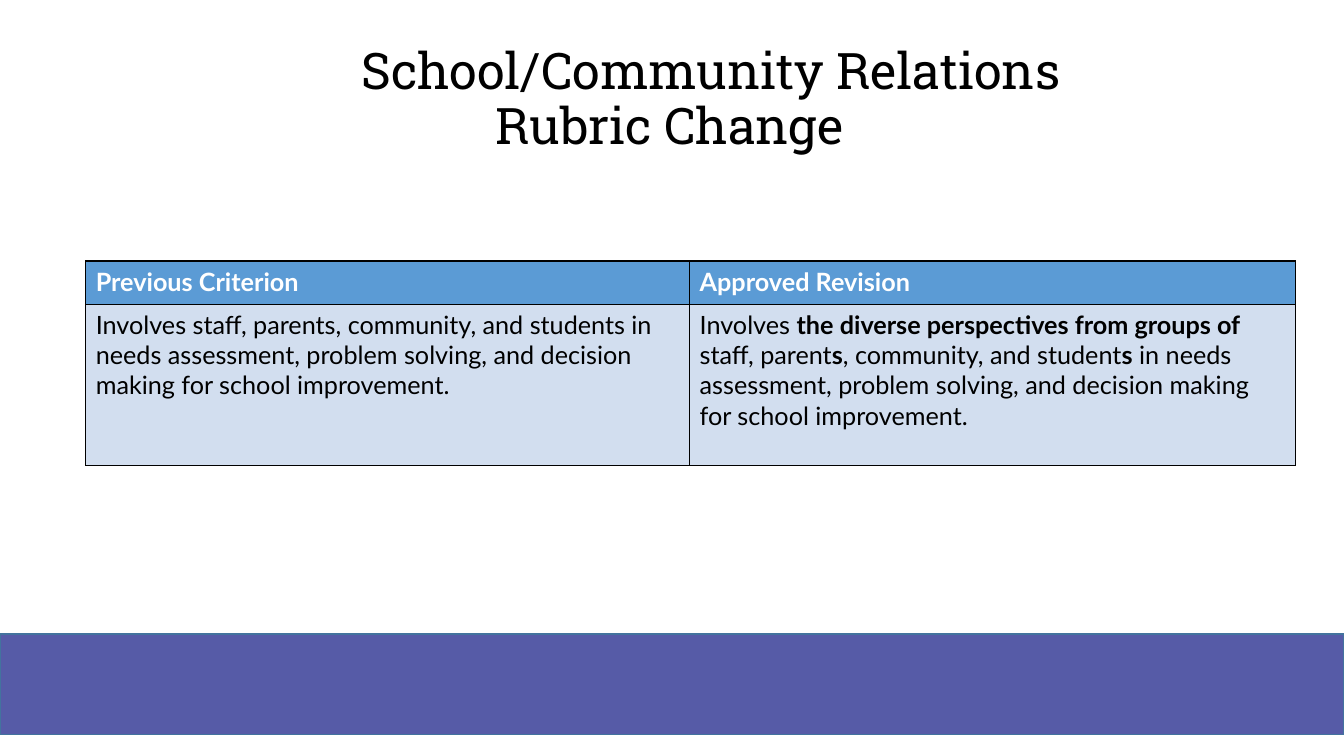
from lxml import etree
from pptx import Presentation
from pptx.dml.color import RGBColor
from pptx.enum.shapes import MSO_SHAPE
from pptx.enum.text import MSO_ANCHOR, PP_ALIGN
from pptx.oxml.ns import qn
from pptx.util import Inches, Pt

RECTANGLE = MSO_SHAPE.RECTANGLE
MIDDLE = MSO_ANCHOR.MIDDLE
CENTER = PP_ALIGN.CENTER

BLANK_LAYOUT = 6
BLACK, WHITE = "000000", "FFFFFF"
HEADER_FILL, BODY_FILL = "5B9BD5", "D2DEEF"
COLUMN_WIDTHS = (5.99, 6.01)
ROW_HEIGHTS = (0.43, 1.6)

# Each cell is a list of (text, bold) runs.
CRITERIA = [
    [[("Previous Criterion", True)], [("Approved Revision", True)]],
    [
        [("Involves staff, parents, community, and students in needs assessment, "
          "problem solving, and decision making for school improvement.", False)],
        [("Involves ", False),
         ("the diverse perspectives from groups of ", True),
         ("staff, parent", False),
         ("s", True),
         (", community, and student", False),
         ("s", True),
         (" in needs assessment, problem solving, and decision making "
          "for school improvement.", False)],
    ],
]


def color(hex_string):
    return RGBColor.from_string(hex_string)


def set_font(font, name, size, hex_string):
    font.name = name
    font.size = Pt(size)
    font.color.rgb = color(hex_string)


def add_band(slide, left, top, width, height):
    band = slide.shapes.add_shape(RECTANGLE, left, top, width, height)
    band.shadow.inherit = False
    band.fill.solid()
    band.fill.fore_color.rgb = color("565BA7")
    band.line.color.rgb = color("43739E")
    band.line.width = Pt(1)


def add_title(slide, text, first_line_indent):
    box = slide.shapes.add_textbox(Inches(0.64), Inches(0.4), Inches(12), Inches(1.2))
    frame = box.text_frame
    frame.word_wrap = True
    frame.vertical_anchor = MIDDLE
    paragraph = frame.paragraphs[0]
    paragraph.text = text
    paragraph.alignment = CENTER
    paragraph.line_spacing = 0.9
    paragraph._p.get_or_add_pPr().set("indent", str(Inches(first_line_indent)))
    set_font(paragraph.font, "Roboto Slab", 36, BLACK)
    for run in paragraph.runs:
        set_font(run.font, "Roboto Slab", 36, BLACK)


def add_borders(cell, hex_string, width):
    properties = cell._tc.get_or_add_tcPr()
    for position, side in enumerate(("a:lnL", "a:lnR", "a:lnT", "a:lnB")):
        line = etree.Element(qn(side), w=str(Pt(width)))
        fill = etree.SubElement(line, qn("a:solidFill"))
        etree.SubElement(fill, qn("a:srgbClr"), val=hex_string)
        properties.insert(position, line)


def fill_cell(cell, runs, fill, font_color):
    cell.fill.solid()
    cell.fill.fore_color.rgb = color(fill)
    add_borders(cell, BLACK, 1)
    paragraph = cell.text_frame.paragraphs[0]
    set_font(paragraph.font, "Lato", 18, font_color)
    for text, bold in runs:
        run = paragraph.add_run()
        run.text = text
        set_font(run.font, "Lato", 18, font_color)
        run.font.bold = bold


def add_criteria_table(slide, left, top):
    table = slide.shapes.add_table(
        len(ROW_HEIGHTS), len(COLUMN_WIDTHS), Inches(left), Inches(top),
        Inches(sum(COLUMN_WIDTHS)), Inches(sum(ROW_HEIGHTS))).table
    for column, width in zip(table.columns, COLUMN_WIDTHS):
        column.width = Inches(width)
    for row, height in zip(table.rows, ROW_HEIGHTS):
        row.height = Inches(height)
    row_colors = ((HEADER_FILL, WHITE), (BODY_FILL, BLACK))
    for row, contents, (fill, font_color) in zip(table.rows, CRITERIA, row_colors):
        for cell, runs in zip(row.cells, contents):
            fill_cell(cell, runs, fill, font_color)


def main():
    presentation = Presentation()
    presentation.slide_width = Inches(13.33)
    presentation.slide_height = Inches(7.5)
    slide = presentation.slides.add_slide(presentation.slide_layouts[BLANK_LAYOUT])
    add_band(slide, 0, Inches(6.29), presentation.slide_width, Inches(1))
    add_title(slide, "School/Community Relations\vRubric Change", 0.83)
    add_criteria_table(slide, 0.85, 2.59)
    presentation.save("out.pptx")


if __name__ == "__main__":
    main()
